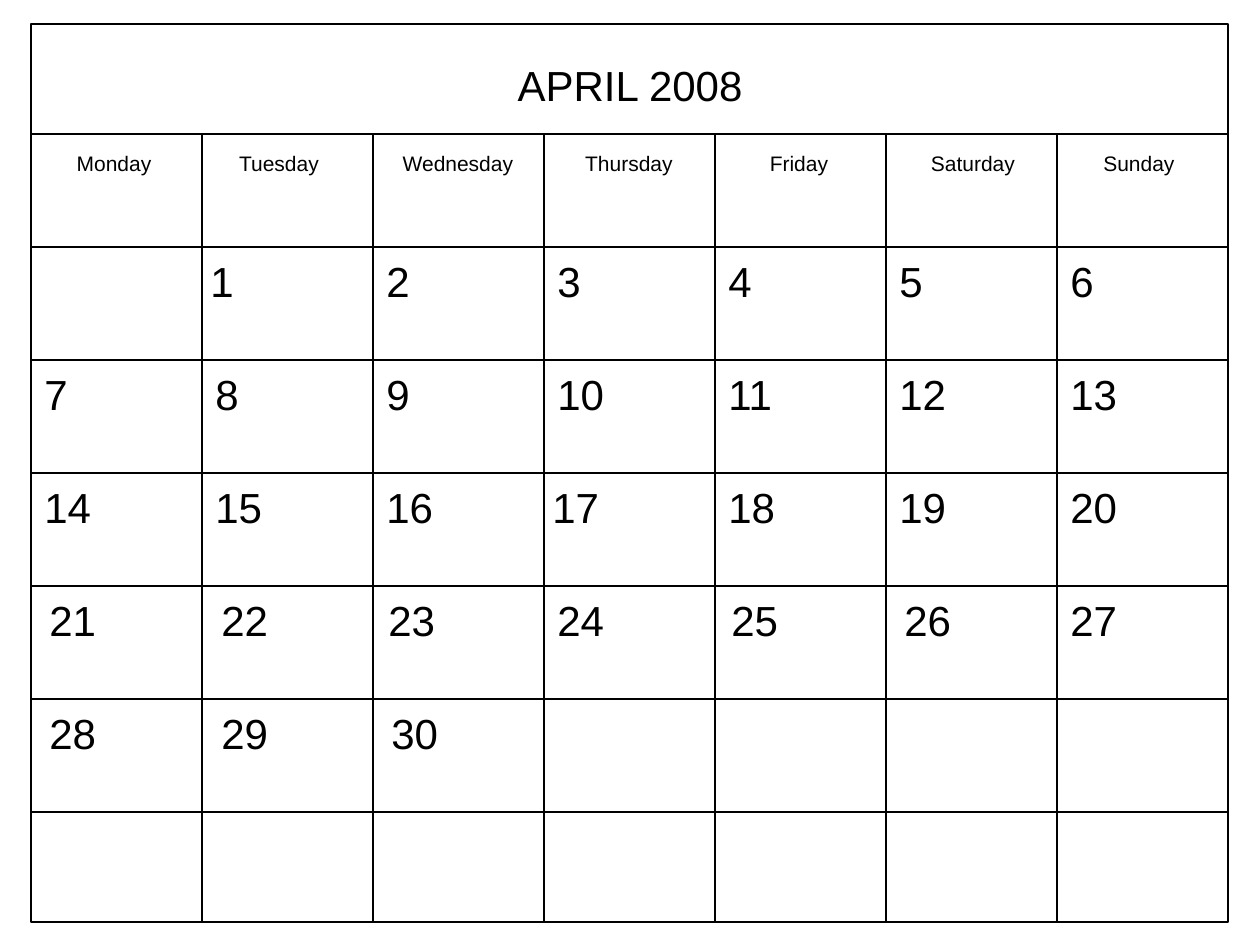
from dataclasses import dataclass

from pptx import Presentation
from pptx.dml.color import RGBColor
from pptx.enum.shapes import MSO_CONNECTOR, MSO_SHAPE
from pptx.enum.text import MSO_ANCHOR, MSO_AUTO_SIZE, PP_ALIGN
from pptx.oxml.ns import qn
from pptx.util import Pt
from lxml import etree

STRAIGHT = MSO_CONNECTOR.STRAIGHT
RECTANGLE = MSO_SHAPE.RECTANGLE
TOP, MIDDLE = MSO_ANCHOR.TOP, MSO_ANCHOR.MIDDLE
LEFT, CENTER = PP_ALIGN.LEFT, PP_ALIGN.CENTER
FIT_SHAPE = MSO_AUTO_SIZE.SHAPE_TO_FIT_TEXT
NO_FIT = MSO_AUTO_SIZE.NONE
LEFT_SIDE, RIGHT_SIDE = 1, 3

PX = 914400 / 126
COLUMNS, TITLE_H, ROW_H = 7, 110, 113

# Weekday name, text box width, shift from the column centre
WEEKDAYS = [
    ("Monday", 106, -2), ("Tuesday", 110, -8), ("Wednesday", 140, 0),
    ("Thursday", 118, 0), ("Friday", 90, -1), ("Saturday", 114, 2),
    ("Sunday", 102, -3),
]
FIRST_COLUMN, LAST_DAY = 1, 30
# Days set slightly off the cell's left edge
DAY_SHIFT = {1: -4, 17: -4, 21: 6, 22: 7, 23: 3, 25: 4, 26: 6, 28: 6, 29: 7, 30: 6}


@dataclass(frozen=True)
class Theme:
    ink: RGBColor = RGBColor(0, 0, 0)
    font: str = "Arial"
    large: int = 24
    small: int = 12
    line: float = 0.75


THEME = Theme()


def emu(*lengths):
    return [round(n * PX) for n in lengths]


def add_text(s, box, text, size, align=LEFT, anchor=TOP, wrap=False):
    tf = s.shapes.add_textbox(*emu(*box)).text_frame
    tf.text = text
    tf.word_wrap = wrap
    tf.auto_size = NO_FIT if wrap else FIT_SHAPE
    tf.vertical_anchor = anchor
    p = tf.paragraphs[0]
    p.alignment = align
    font = p.runs[0].font
    font.name, font.size = THEME.font, Pt(size)
    font.color.rgb = THEME.ink


def style_line(line):
    line.color.rgb = THEME.ink
    line.width = Pt(THEME.line)


def add_line(s, x1, y1, x2, y2):
    line = s.shapes.add_connector(STRAIGHT, *emu(x1, y1, x2, y2))
    style_line(line.line)
    etree.SubElement(line._element.spPr, qn("a:effectLst"))
    return line


def column_x(box, column):
    return box[0] + box[2] * column // COLUMNS


def add_grid(s, box):
    x, y, w, h = box
    # Outer frame
    frame = s.shapes.add_shape(RECTANGLE, *emu(*box))
    frame.shadow.inherit = False
    frame.fill.background()
    style_line(frame.line)

    # Row lines
    for row_y in range(y + TITLE_H, y + h - ROW_H + 10, ROW_H):
        line = add_line(s, x, row_y, x + w, row_y)
        if row_y == y + h // 2:
            line.begin_connect(frame, LEFT_SIDE)
            line.end_connect(frame, RIGHT_SIDE)

    # Column lines
    for column in range(1, COLUMNS):
        line_x = column_x(box, column)
        add_line(s, line_x, y + TITLE_H, line_x, y + h)


def add_headings(s, box):
    x, y, w, h = box
    # Month
    title_w = 256
    add_text(s, (x + (w - title_w) // 2 + 1, y + 29, title_w, 63),
             "APRIL 2008", THEME.large, CENTER)
    # Weekdays
    for column, (name, width, shift) in enumerate(WEEKDAYS):
        centre = (column_x(box, column) + column_x(box, column + 1)) // 2
        add_text(s, (centre - width // 2 + shift, y + TITLE_H + 10, width, 38),
                 name, THEME.small, CENTER)


def add_days(s, box):
    for day in range(1, LAST_DAY + 1):
        week, column = divmod(day - 1 + FIRST_COLUMN, COLUMNS)
        x = column_x(box, column) + DAY_SHIFT.get(day, 1)
        y = box[1] + TITLE_H + ROW_H * (week + 1)
        add_text(s, (x, y, 94, 67), str(day), THEME.large,
                 anchor=MIDDLE, wrap=True)


def add_calendar(s, box):
    add_grid(s, box)
    add_headings(s, box)
    add_days(s, box)


def main():
    prs = Presentation()
    prs.slide_width, prs.slide_height = emu(1260, 945)
    s = prs.slides.add_slide(prs.slide_layouts[6])
    add_calendar(s, (31, 24, 1197, 898))
    prs.save("out.pptx")


if __name__ == "__main__":
    main()
